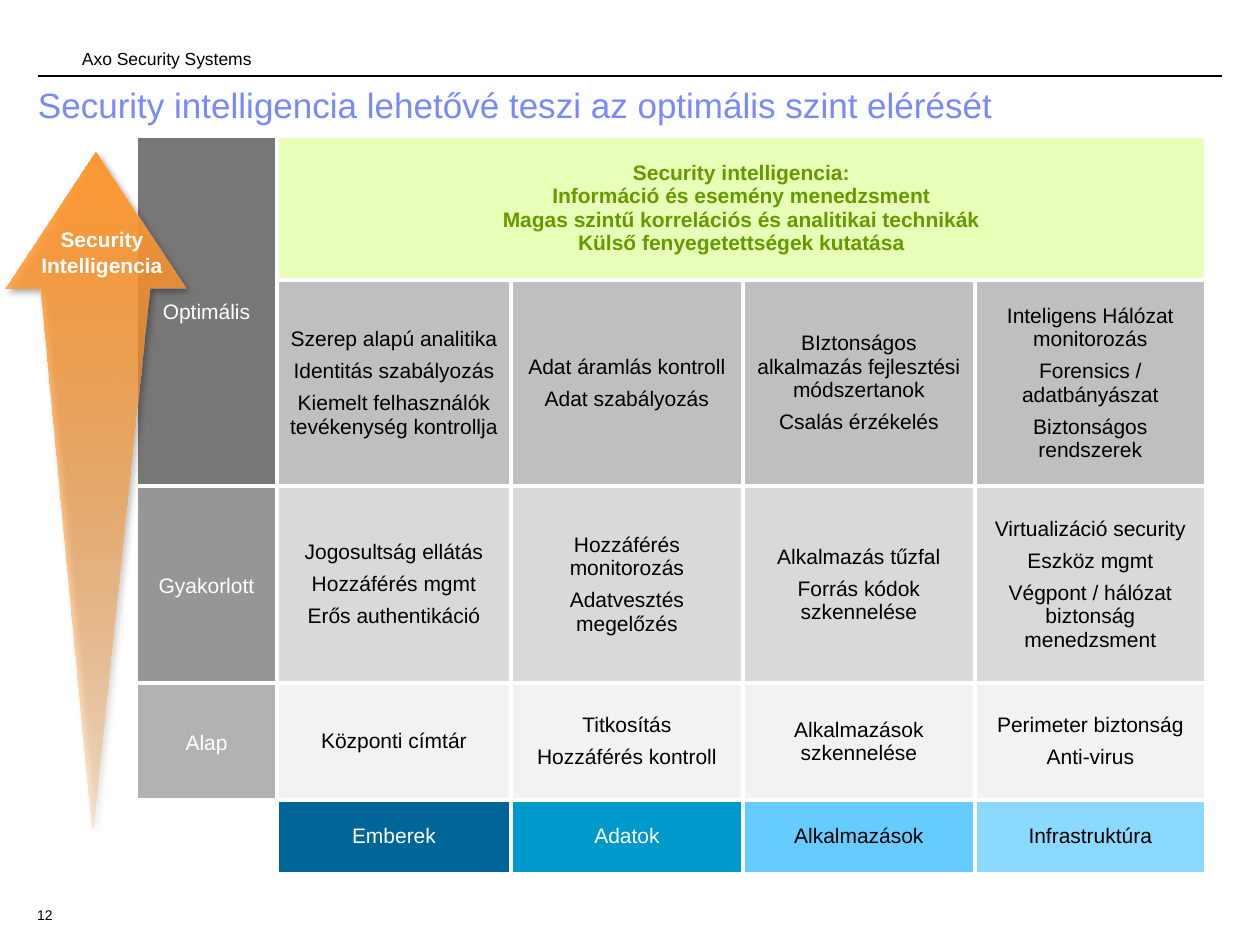
from lxml import etree
from pptx import Presentation
from pptx import util as u
from pptx.dml.color import RGBColor
from pptx.enum import shapes, text
from pptx.oxml import ns

SCALE = 914400 / 126
FONT = "Arial"
COLORS = {
    "black": "000000", "white": "FFFFFF", "title": "7889FB", "arrow": "FF9933",
    "banner": "E7FFB7", "banner_text": "669900",
    "optimal": "777777", "optimal_body": "BFBFBF",
    "skilled": "969696", "skilled_body": "D9D9D9",
    "basic": "B2B2B2", "basic_body": "F2F2F2",
    "people": "006699", "data": "0099CC", "apps": "66CCFF", "infra": "8CD9FF",
}
COLUMN_WIDTHS = [141, 234, 232, 232, 231]
ROW_HEIGHTS = [144, 196, 197, 117, 74]
BANNER = [
    "Security intelligencia:",
    "Információ és esemény menedzsment",
    "Magas szintű korrelációs és analitikai technikák",
    "Külső fenyegetettségek kutatása",
]
LEVELS = [("Optimális", "optimal", 0), ("Gyakorlott", "skilled", 2), ("Alap", "basic", 3)]
PRACTICES = [
    ("optimal_body", [
        ["Szerep alapú analitika", "Identitás szabályozás",
         "Kiemelt felhasználók tevékenység kontrollja"],
        ["Adat áramlás kontroll", "Adat szabályozás"],
        ["BIztonságos alkalmazás fejlesztési módszertanok", "Csalás érzékelés"],
        ["Inteligens Hálózat monitorozás", "Forensics / adatbányászat",
         "Biztonságos rendszerek"],
    ]),
    ("skilled_body", [
        ["Jogosultság ellátás", "Hozzáférés mgmt", "Erős authentikáció"],
        ["Hozzáférés monitorozás", "Adatvesztés megelőzés"],
        ["Alkalmazás tűzfal", "Forrás kódok szkennelése"],
        ["Virtualizáció security", "Eszköz mgmt",
         "Végpont / hálózat biztonság menedzsment"],
    ]),
    ("basic_body", [
        ["Központi címtár"],
        ["Titkosítás", "Hozzáférés kontroll"],
        ["Alkalmazások szkennelése"],
        ["Perimeter biztonság", "Anti-virus"],
    ]),
]
DOMAINS = [
    ("Emberek", "people", "white"), ("Adatok", "data", "white"),
    ("Alkalmazások", "apps", "black"), ("Infrastruktúra", "infra", "black"),
]
ARROW = [(5, 289), (95, 152), (185, 289), (149, 289), (93, 828), (91, 828), (40, 289)]


def px(length):
    return u.Emu(round(length * SCALE))


def rgb(name):
    return RGBColor.from_string(COLORS[name])


def write(text_frame, lines, size, color, bold=False, align=text.PP_ALIGN.LEFT,
          spacing=None, gap=0):
    text_frame.text = "\n".join(lines)
    for index, paragraph in enumerate(text_frame.paragraphs):
        paragraph.alignment = align
        if spacing:
            paragraph.line_spacing = spacing
        if gap and index:
            paragraph.space_before = u.Pt(gap)
        for run in paragraph.runs:
            run.font.name = FONT
            run.font.size = u.Pt(size)
            run.font.bold = bold
            run.font.color.rgb = rgb(color)


def add_label(slide, box, lines, size, color, insets=(13, 6),
              anchor=text.MSO_ANCHOR.TOP, **style):
    shape = slide.shapes.add_textbox(*map(px, box))
    frame = shape.text_frame
    frame.word_wrap = True
    frame.vertical_anchor = anchor
    frame.margin_left = frame.margin_right = px(insets[0])
    frame.margin_top = frame.margin_bottom = px(insets[1])
    write(frame, lines, size, color, **style)


def add_rule(slide, left, right, y):
    rule = slide.shapes.add_connector(
        shapes.MSO_CONNECTOR.STRAIGHT, px(left), px(y), px(right), px(y))
    rule.line.color.rgb = rgb("black")
    rule.line.width = u.Pt(0.75)
    etree.SubElement(rule.element.spPr, ns.qn("a:effectLst"))


def add_borders(cell):
    properties = cell._tc.get_or_add_tcPr()
    for side in ("lnL", "lnR", "lnT", "lnB"):
        line = etree.SubElement(properties, ns.qn(f"a:{side}"), w=str(u.Pt(3)))
        fill = etree.SubElement(line, ns.qn("a:solidFill"))
        etree.SubElement(fill, ns.qn("a:srgbClr"), val=COLORS["white"])


def fill_cell(cell, lines, fill, color, margins=(19, 19), **style):
    cell.fill.solid()
    cell.fill.fore_color.rgb = rgb(fill)
    cell.vertical_anchor = text.MSO_ANCHOR.MIDDLE
    cell.margin_left = cell.margin_right = px(12)
    cell.margin_top, cell.margin_bottom = map(px, margins)
    write(cell.text_frame, lines, 12, color, align=text.PP_ALIGN.CENTER, **style)


def add_maturity_table(slide):
    table = slide.shapes.add_table(
        len(ROW_HEIGHTS), len(COLUMN_WIDTHS), px(136), px(136),
        px(sum(COLUMN_WIDTHS)), px(sum(ROW_HEIGHTS))).table
    table.first_row = table.horz_banding = False
    for column, width in zip(table.columns, COLUMN_WIDTHS):
        column.width = px(width)
    for row, height in zip(table.rows, ROW_HEIGHTS):
        row.height = px(height)
    for cell in table.iter_cells():
        add_borders(cell)
        cell.fill.background()

    table.cell(0, 0).merge(table.cell(1, 0))
    table.cell(0, 1).merge(table.cell(0, 4))
    fill_cell(table.cell(0, 1), BANNER, "banner", "banner_text", (6, 6), bold=True)
    for name, fill, row in LEVELS:
        fill_cell(table.cell(row, 0), [name], fill, "white", (11, 6), spacing=0.87)
    for row, (fill, practices) in enumerate(PRACTICES, 1):
        for column, lines in enumerate(practices, 1):
            fill_cell(table.cell(row, column), lines, fill, "black", gap=4.8)
    for column, (name, fill, color) in enumerate(DOMAINS, 1):
        fill_cell(table.cell(4, column), [name], fill, color, (13, 13), spacing=0.87)


def add_arrow(slide):
    builder = slide.shapes.build_freeform(*ARROW[0], scale=SCALE)
    builder.add_line_segments(ARROW[1:], close=True)
    arrow = builder.convert_to_shape()
    arrow.line.fill.background()
    arrow.fill.gradient()
    arrow.fill.gradient_angle = 90
    for stop in arrow.fill.gradient_stops:
        stop.color.rgb = rgb("arrow")
    faded = next(arrow.element.spPr.iter(ns.qn("a:srgbClr")))
    etree.SubElement(faded, ns.qn("a:alpha"), val="20000")

    arrow.shadow.inherit = False
    effects = arrow.element.spPr.find(ns.qn("a:effectLst"))
    shadow = etree.SubElement(
        effects, ns.qn("a:outerShdw"), blurRad=str(u.Pt(4)), dist=str(u.Pt(3)),
        dir=str(45 * 60000), algn="tl", rotWithShape="0")
    shade = etree.SubElement(shadow, ns.qn("a:srgbClr"), val=COLORS["black"])
    etree.SubElement(shade, ns.qn("a:alpha"), val="40000")


def main():
    presentation = Presentation()
    presentation.slide_width = px(1260)
    presentation.slide_height = px(945)
    slide = presentation.slides.add_slide(presentation.slide_layouts[6])

    add_rule(slide, 38, 1222, 76)
    add_label(slide, (69, 19, 592, 50), ["Axo Security Systems"], 10, "black",
              insets=(13, 0), anchor=text.MSO_ANCHOR.BOTTOM)
    add_label(slide, (24, 901, 319, 25), ["12"], 8, "black")
    add_label(slide, (25, 82, 1197, 54),
              ["Security intelligencia lehetővé teszi az optimális szint elérését"],
              20, "title", spacing=0.9)
    add_maturity_table(slide)
    add_arrow(slide)
    add_label(slide, (32, 221, 140, 63), ["Security", "Intelligencia"], 12, "white",
              insets=(0, 6), bold=True, align=text.PP_ALIGN.CENTER)
    presentation.save("out.pptx")


if __name__ == "__main__":
    main()
